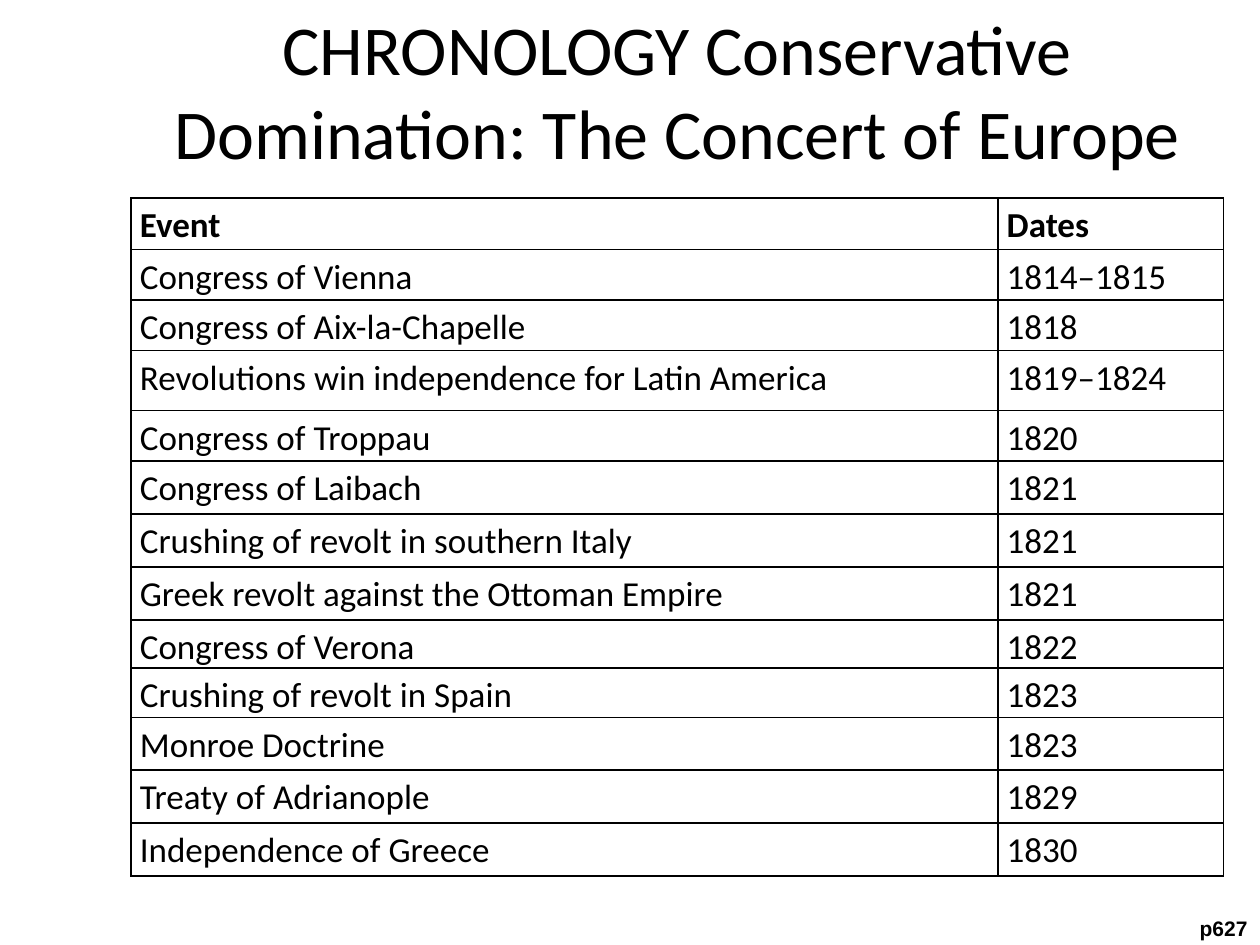
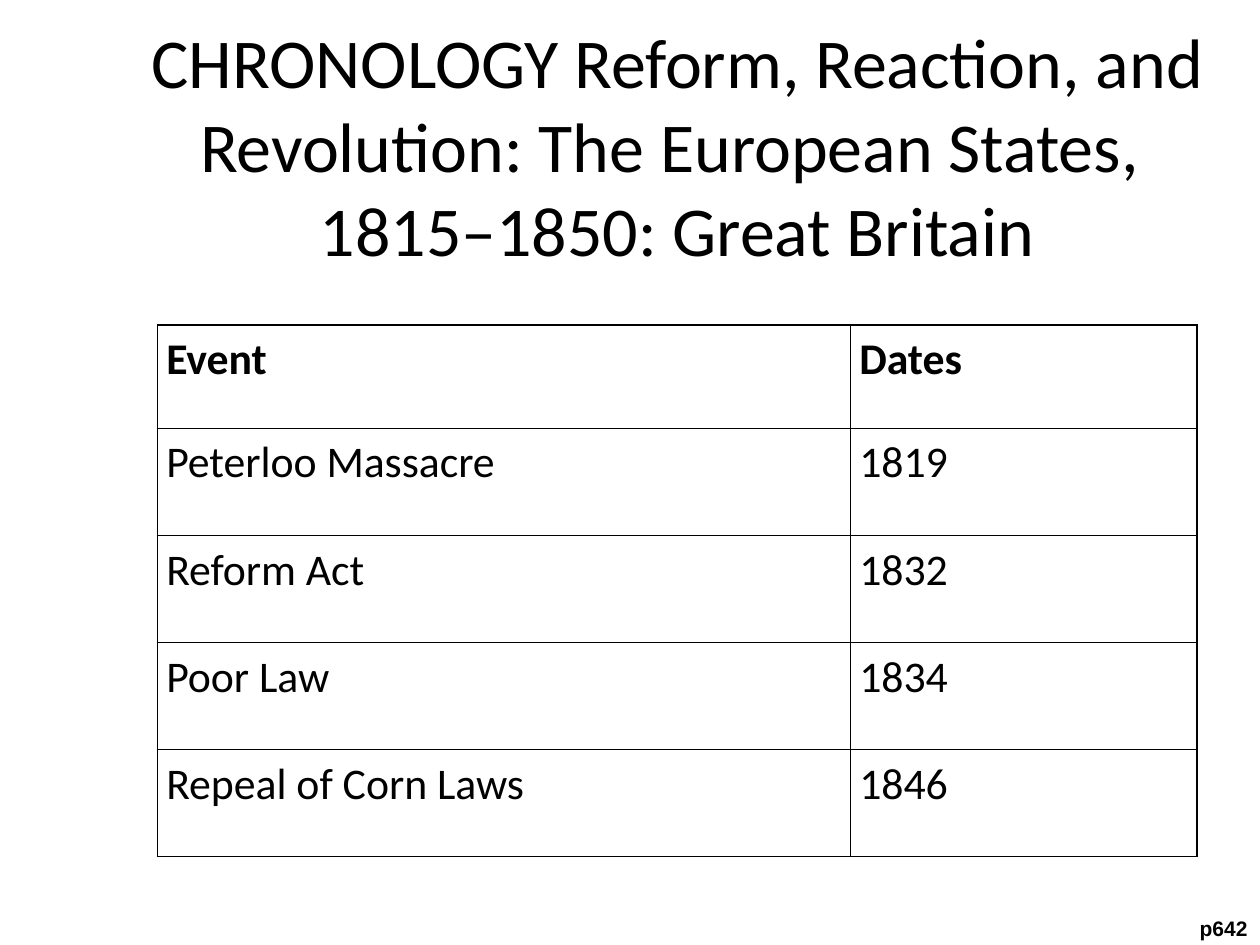
from dataclasses import dataclass

from lxml import etree
from pptx import Presentation
from pptx import util as u
from pptx.dml.color import RGBColor
from pptx.enum import text
from pptx.oxml.ns import qn

EMU_PER_PX = 9144  # 100 px to the inch
COLORS = {"ink": "000000", "paper": "FFFFFF"}
TITLE_FONT, FOOTER_FONT = "Calibri", "Arial"
HEADER = ("Event", "Dates")


@dataclass
class Chronology:
    title: list[str]
    title_top: int
    page: str
    left: int
    top: int
    col_widths: tuple[int, int]
    row_heights: list[int]
    size: int
    events: list[tuple[str, str]]


CHRONOLOGIES = [
    Chronology(
        ["CHRONOLOGY Conservative Domination: The Concert of Europe"], 50, "p627",
        104, 157, (688, 179),
        [41, 40, 40, 48, 40, 42, 42, 42, 33, 39, 42, 42, 42], 20,
        [
            ("Congress of Vienna", "1814–1815"),
            ("Congress of Aix-la-Chapelle", "1818"),
            ("Revolutions win independence for Latin America", "1819–1824"),
            ("Congress of Troppau", "1820"),
            ("Congress of Laibach", "1821"),
            ("Crushing of revolt in southern Italy", "1821"),
            ("Greek revolt against the Ottoman Empire", "1821"),
            ("Congress of Verona", "1822"),
            ("Crushing of revolt in Spain", "1823"),
            ("Monroe Doctrine", "1823"),
            ("Treaty of Adrianople", "1829"),
            ("Independence of Greece", "1830"),
        ],
    ),
    Chronology(
        ["CHRONOLOGY Reform, Reaction, and Revolution: The European States, ",
         "1815–1850: Great Britain"], 94, "p642",
        125, 258, (550, 275), [82] + [85] * 4, 25,
        [
            ("Peterloo Massacre", "1819"),
            ("Reform Act", "1832"),
            ("Poor Law", "1834"),
            ("Repeal of Corn Laws", "1846"),
        ],
    ),
]


def px(n: int) -> u.Emu:
    return u.Emu(n * EMU_PER_PX)


def add_run(p, words: str, size: int, font: str = TITLE_FONT, bold: bool = False) -> None:
    r = p.add_run()
    r.text = words
    r.font.name, r.font.size, r.font.bold = font, u.Pt(size), bold
    r.font.color.rgb = RGBColor.from_string(COLORS["ink"])


def add_title(s, lines: list[str], top: int) -> None:
    tf = s.shapes.add_textbox(px(75), px(top), px(925), px(42)).text_frame
    tf.word_wrap = True
    tf.auto_size = text.MSO_AUTO_SIZE.NONE
    tf.vertical_anchor = text.MSO_ANCHOR.MIDDLE
    p = tf.paragraphs[0]
    p.alignment = text.PP_ALIGN.CENTER
    for i, line in enumerate(lines):
        if i:
            p.add_line_break()
        add_run(p, line, 40)


def add_page_reference(s, page: str) -> None:
    tf = s.shapes.add_textbox(px(937), px(722), px(63), px(30)).text_frame
    tf.word_wrap = False
    tf.auto_size = text.MSO_AUTO_SIZE.SHAPE_TO_FIT_TEXT
    p = tf.paragraphs[0]
    p.alignment = text.PP_ALIGN.RIGHT
    add_run(p, f" {page}", 12, FOOTER_FONT, bold=True)


def style_cell(cell) -> None:
    """Give the cell a plain fill, narrow margins and a 1 pt border all round."""
    cell.margin_left = cell.margin_right = px(7)
    cell.margin_top = cell.margin_bottom = 0
    tc_pr = cell._tc.get_or_add_tcPr()
    for side in ("a:lnL", "a:lnR", "a:lnT", "a:lnB"):
        ln = etree.SubElement(tc_pr, qn(side), w=str(u.Pt(1)))
        fill = etree.SubElement(ln, qn("a:solidFill"))
        etree.SubElement(fill, qn("a:srgbClr"), val=COLORS["ink"])
    cell.fill.solid()
    cell.fill.fore_color.rgb = RGBColor.from_string(COLORS["paper"])


def add_event_table(s, c: Chronology) -> None:
    rows = [HEADER, *c.events]
    table = s.shapes.add_table(
        len(rows), len(HEADER), px(c.left), px(c.top),
        px(sum(c.col_widths)), px(sum(c.row_heights)),
    ).table
    table.horz_banding = False
    for col, width in zip(table.columns, c.col_widths):
        col.width = px(width)
    for i, (height, values) in enumerate(zip(c.row_heights, rows)):
        table.rows[i].height = px(height)
        for j, value in enumerate(values):
            cell = table.cell(i, j)
            style_cell(cell)
            p = cell.text_frame.paragraphs[0]
            p.line_spacing = 1.15
            add_run(p, value, c.size, bold=i == 0)


def main() -> None:
    prs = Presentation()
    prs.slide_width, prs.slide_height = px(1000), px(750)
    for c in CHRONOLOGIES:
        s = prs.slides.add_slide(prs.slide_layouts[6])
        add_title(s, c.title, c.title_top)
        add_page_reference(s, c.page)
        add_event_table(s, c)
    prs.save("out.pptx")


if __name__ == "__main__":
    main()
